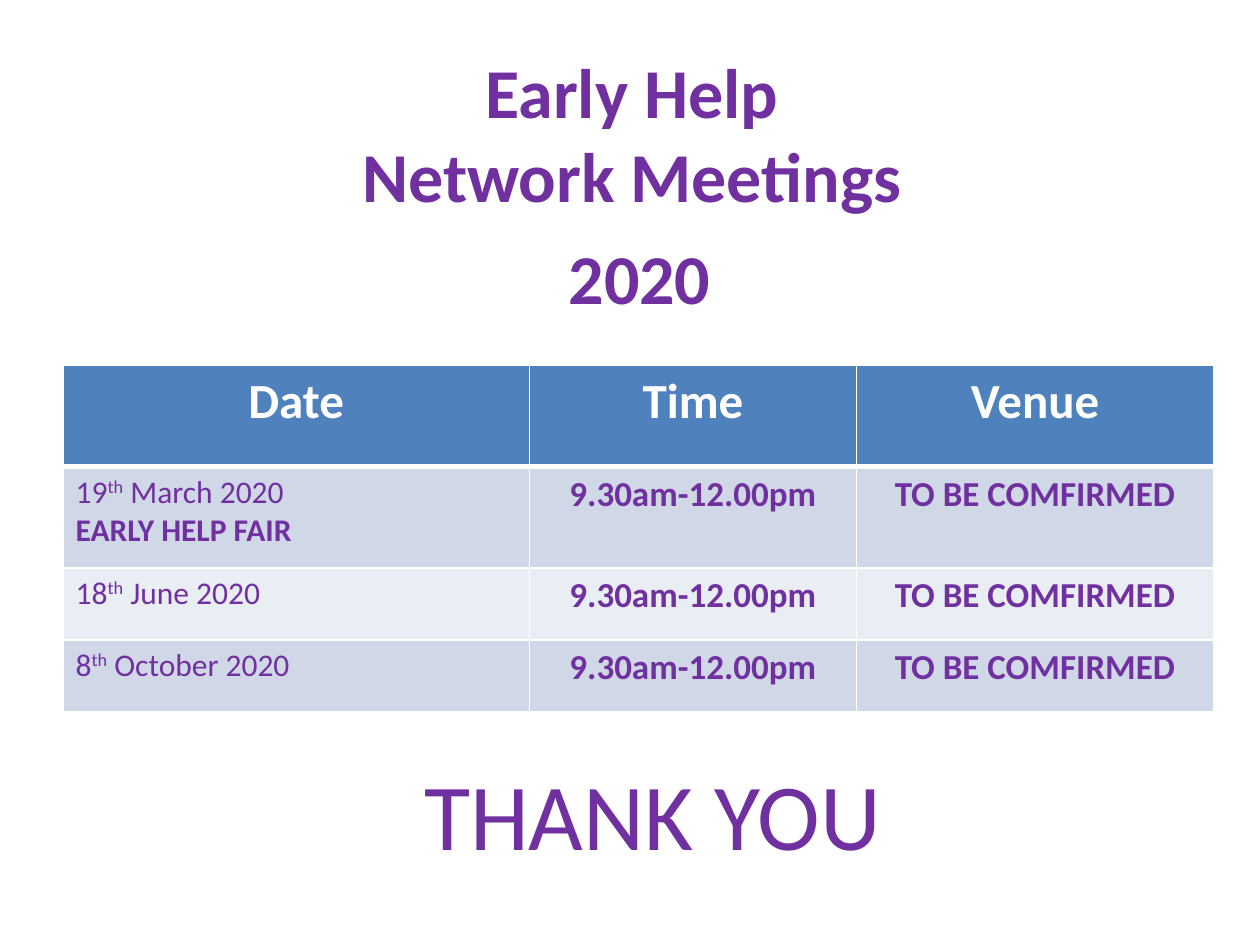
import lxml.etree
import pptx
import pptx.dml.color
import pptx.enum.text
import pptx.oxml.ns
import pptx.util

Cm, Pt = pptx.util.Cm, pptx.util.Pt
CENTER = pptx.enum.text.PP_ALIGN.CENTER
LEFT = pptx.enum.text.PP_ALIGN.LEFT

PURPLE, WHITE, HEADER_BLUE = "7030A0", "FFFFFF", "4F81BD"
BANDS = ("D0D8E8", "E9EDF4")

TITLE = ["Early Help ", "Network Meetings ", "2020"]
HEADINGS = ["Date", "Time", "Venue"]
TIME, VENUE = "9.30am-12.00pm", "TO BE COMFIRMED"
# day, ordinal ending, month and year, special event
MEETINGS = [
    ("19", "th", " March 2020", "EARLY HELP FAIR"),
    ("18", "th", " June 2020", None),
    ("8", "th", " October 2020", None),
]
CLOSING = "THANK YOU"

COLUMN_WIDTHS = (9.4, 6.6, 7.19)
ROW_HEIGHTS = (2.04, 2.04, 1.45, 1.45)

TITLE_FONT = {"size": Pt(40), "bold": True}
HEADING_FONT = {"size": Pt(28), "bold": True}
DATE_FONT = {"size": Pt(18), "bold": False}
EVENT_FONT = {"size": Pt(18), "bold": True}
DETAIL_FONT = {"size": Pt(20), "bold": True}
CLOSING_FONT = {"size": Pt(54), "bold": False}


def rgb(color):
    return pptx.dml.color.RGBColor.from_string(color)


def add_run(paragraph, text, font, color=PURPLE, raised=False):
    run = paragraph.add_run()
    run.text = text
    run.font.name = "Calibri"
    run.font.color.rgb = rgb(color)
    for attribute, value in font.items():
        setattr(run.font, attribute, value)
    if raised:
        run.font._element.set("baseline", "30000")


def write_lines(frame, lines, font, align=CENTER, color=PURPLE):
    """Write one paragraph per line and return the paragraphs."""
    paragraphs = [frame.paragraphs[0]] + [frame.add_paragraph() for _ in lines[1:]]
    for paragraph, line in zip(paragraphs, lines):
        paragraph.alignment = align
        add_run(paragraph, line, font, color)
    return paragraphs


def add_text(slide, left, top, width, height):
    frame = slide.shapes.add_textbox(Cm(left), Cm(top), Cm(width), Cm(height)).text_frame
    frame.word_wrap = True
    return frame


def paint_cell(cell, fill, bottom_width):
    properties = cell._tc.get_or_add_tcPr()
    qn = pptx.oxml.ns.qn
    for side, width in (("lnL", 1), ("lnR", 1), ("lnT", 1), ("lnB", bottom_width)):
        line = lxml.etree.SubElement(properties, qn(f"a:{side}"), w=str(Pt(width)))
        solid = lxml.etree.SubElement(line, qn("a:solidFill"))
        lxml.etree.SubElement(solid, qn("a:srgbClr"), val=WHITE)
    cell.fill.solid()
    cell.fill.fore_color.rgb = rgb(fill)


def add_schedule(slide):
    table = slide.shapes.add_table(
        len(ROW_HEIGHTS), len(COLUMN_WIDTHS), Cm(1.27), Cm(7.37),
        Cm(sum(COLUMN_WIDTHS)), Cm(sum(ROW_HEIGHTS))).table
    for column, width in zip(table.columns, COLUMN_WIDTHS):
        column.width = Cm(width)
    for row, height in zip(table.rows, ROW_HEIGHTS):
        row.height = Cm(height)

    for column, heading in enumerate(HEADINGS):
        cell = table.cell(0, column)
        paint_cell(cell, HEADER_BLUE, 3)
        write_lines(cell.text_frame, [heading], HEADING_FONT, color=WHITE)

    for row, (day, ending, month, event) in enumerate(MEETINGS, start=1):
        date, time, venue = (table.cell(row, column) for column in range(3))
        for cell in (date, time, venue):
            paint_cell(cell, BANDS[(row - 1) % 2], 1)
        date_line, = write_lines(date.text_frame, [day], DATE_FONT, LEFT)
        add_run(date_line, ending, DATE_FONT, raised=True)
        add_run(date_line, month, DATE_FONT)
        if event:
            add_run(date.text_frame.add_paragraph(), event, EVENT_FONT)
        write_lines(time.text_frame, [TIME], DETAIL_FONT)
        write_lines(venue.text_frame, [VENUE], DETAIL_FONT)


def main():
    presentation = pptx.Presentation()
    presentation.slide_width, presentation.slide_height = Cm(25.4), Cm(19.05)
    slide = presentation.slides.add_slide(presentation.slide_layouts[6])

    title = add_text(slide, 1.3, 0.86, 23.19, 5.74)
    year = write_lines(title, TITLE, TITLE_FONT)[-1]
    year.space_before = Pt(10)

    add_schedule(slide)

    closing = add_text(slide, 8.3, 15.11, 9.8, 2.57)
    write_lines(closing, [CLOSING], CLOSING_FONT, LEFT)

    presentation.save("out.pptx")


if __name__ == "__main__":
    main()
